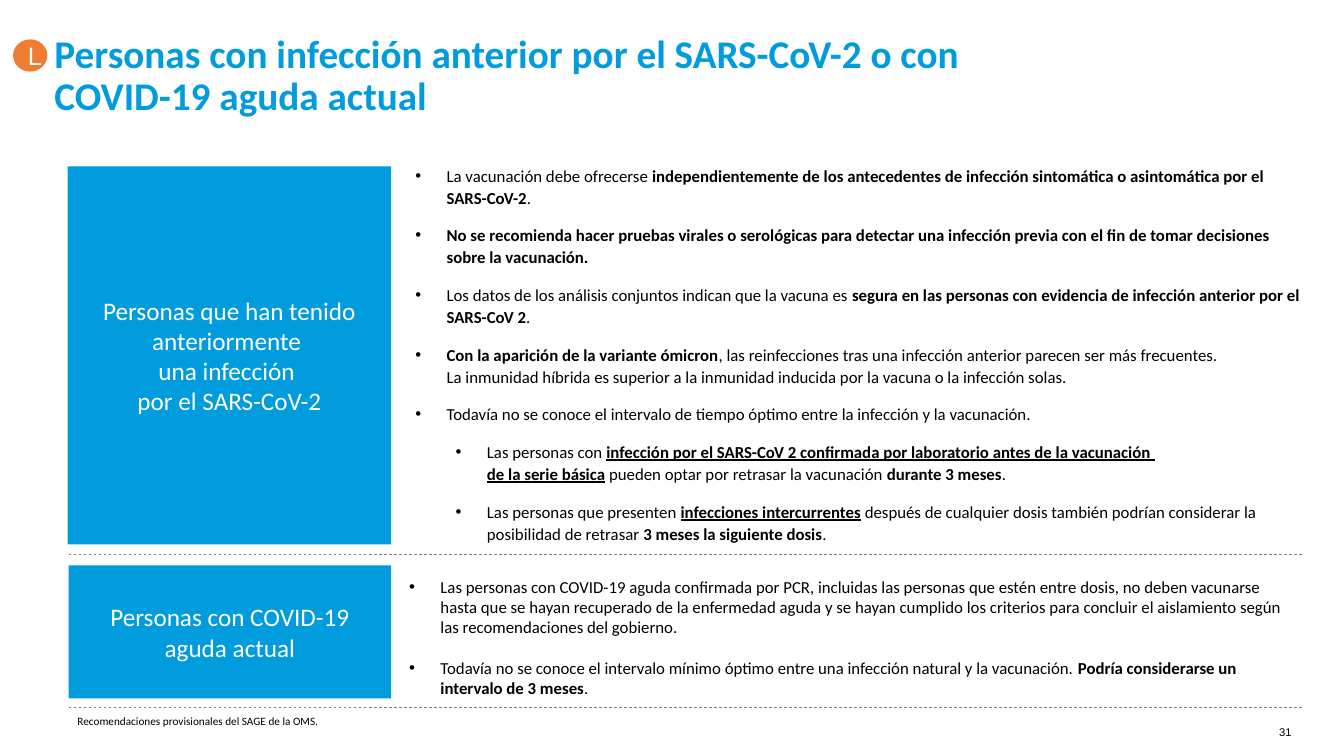
"""Builds the slide on vaccination after earlier or during current infection."""
from copy import deepcopy

from lxml import etree
from pptx import Presentation
from pptx import util as u
from pptx.dml.color import RGBColor
from pptx.enum import dml, shapes, text
from pptx.oxml.ns import qn

COLORS = {"blue": "009CDE", "orange": "EE7D31", "grey": "808080",
          "black": "000000", "white": "FFFFFF"}

TITLE = "Personas con infección anterior por el SARS-CoV-2 o con COVID-19 aguda actual"
BADGE = "L"
PAGE = "31"
SOURCE = "Recomendaciones provisionales del SAGE de la OMS."
PRIOR_LABEL = "Personas que han tenido anteriormente \nuna infección \npor el SARS-CoV-2"
ACUTE_LABEL = "Personas con COVID-19 aguda actual"

PRIOR_POINTS = [
    (0, [("La vacunación debe ofrecerse ", ""),
         ("independientemente de los antecedentes de infección sintomática o "
          "asintomática por el SARS-CoV-2", "b"), (".", "")]),
    (0, [("No se recomienda hacer pruebas virales o serológicas para detectar una "
          "infección previa con el fin de tomar decisiones sobre la vacunación.", "b")]),
    (0, [("Los datos de los análisis conjuntos indican que la vacuna es ", ""),
         ("segura en las personas con evidencia de infección anterior por el "
          "SARS-CoV 2", "b"), (".", "")]),
    (0, [("Con la aparición de la variante ómicron", "b"),
         (", las reinfecciones tras una infección anterior parecen ser más frecuentes. \n"
          "La inmunidad híbrida es superior a la inmunidad inducida por la vacuna o "
          "la infección solas.", "")]),
    (0, [("Todavía no se conoce el intervalo de tiempo óptimo entre la infección y "
          "la vacunación.", "")]),
    (1, [("Las personas con ", ""),
         ("infección por el SARS-CoV 2 confirmada por laboratorio antes de la "
          "vacunación \nde la serie básica", "bu"),
         (" pueden optar por retrasar la vacunación ", ""),
         ("durante 3 meses", "b"), (".", "")]),
    (1, [("Las personas que presenten ", ""), ("infecciones intercurrentes", "bu"),
         (" después de cualquier dosis también podrían considerar la posibilidad de "
          "retrasar ", ""), ("3 meses la siguiente dosis", "b"), (".", "")]),
]
ACUTE_POINTS = [
    (0, [("Las personas con COVID-19 aguda confirmada por PCR, incluidas las personas "
          "que estén entre dosis, no deben vacunarse hasta que se hayan recuperado de "
          "la enfermedad aguda y se hayan cumplido los criterios para concluir el "
          "aislamiento según las recomendaciones del gobierno.", "")]),
    (0, [("Todavía no se conoce el intervalo mínimo óptimo entre una infección natural "
          "y la vacunación. ", ""),
         ("Podría considerarse un intervalo de 3 meses", "b"), (".", "")]),
]

LEFT, RIGHT = 0.68, 12.93
DIVIDERS = (5.5, 7.02)
INDENT, HANG, LEVEL_STEP = 0.53, 0.31, 0.4
DEFAULT_INSETS = (0.1, 0.05, 0.1, 0.05)

deck = Presentation()
deck.slide_width, deck.slide_height = u.Inches(13.33), u.Inches(7.5)
slide = deck.slides.add_slide(deck.slide_layouts[6])


def rgb(name):
    return RGBColor.from_string(COLORS[name])


def apply(target, values):
    for key, value in values.items():
        setattr(target, key, value)


def add_bullet(paragraph, level):
    props = paragraph._p.get_or_add_pPr()
    props.set("marL", str(u.Inches(INDENT + level * LEVEL_STEP)))
    props.set("indent", str(u.Inches(-HANG)))
    color = etree.SubElement(props, qn("a:buClr"))
    etree.SubElement(color, qn("a:srgbClr")).set("val", COLORS["black"])
    etree.SubElement(props, qn("a:buFont")).set("typeface", "Arial")
    etree.SubElement(props, qn("a:buChar")).set("char", "•")


def add_run(paragraph, words, style, size, color, face):
    for index, part in enumerate(words.split("\n")):
        if index:
            paragraph.add_line_break()
            paragraph._p[-1].append(deepcopy(run._r.rPr))
        run = paragraph.add_run()
        run.text = part
        apply(run.font, {"size": u.Pt(size), "name": face,
                         "bold": "b" in style, "underline": "u" in style})
        run.font.color.rgb = rgb(color)


def write(shape, points, size, color="black", face="Calibri", bullets=False,
          insets=DEFAULT_INSETS, anchor=text.MSO_ANCHOR.TOP, gap=0, **layout):
    frame = shape.text_frame
    sides = ("margin_left", "margin_top", "margin_right", "margin_bottom")
    apply(frame, {"word_wrap": True, "vertical_anchor": anchor,
                  **{side: u.Inches(inset) for side, inset in zip(sides, insets)}})
    for index, (level, runs) in enumerate(points):
        paragraph = frame.add_paragraph() if index else frame.paragraphs[0]
        if bullets:
            add_bullet(paragraph, level)
        apply(paragraph, layout)
        if index:
            paragraph.space_before = u.Pt(gap)
        for words, style in runs:
            add_run(paragraph, words, style, size, color, face)


def add_text(box, points, size, **options):
    write(slide.shapes.add_textbox(*map(u.Inches, box)), points, size, **options)


def add_label(kind, box, words, fill, face="Calibri"):
    shape = slide.shapes.add_shape(kind, *map(u.Inches, box))
    shape.shadow.inherit = False
    shape.fill.solid()
    shape.fill.fore_color.rgb = rgb(fill)
    shape.line.fill.background()
    write(shape, [(0, [(words, "")])], 18, color="white", face=face,
          anchor=text.MSO_ANCHOR.MIDDLE, alignment=text.PP_ALIGN.CENTER)


def add_divider(y):
    line = slide.shapes.add_connector(shapes.MSO_CONNECTOR.STRAIGHT,
                                      *map(u.Inches, (LEFT, y, RIGHT, y)))
    apply(line.line, {"width": u.Pt(0.5), "dash_style": dml.MSO_LINE.DASH})
    line.line.color.rgb = rgb("grey")
    etree.SubElement(line._element.spPr, qn("a:effectLst"))


add_text((3.88, 1.62, 9.06, 3.78), PRIOR_POINTS, 12, bullets=True,
         insets=(0.02, 0, 0.02, 0), gap=5, line_spacing=1.1, space_after=u.Pt(6))
add_text((12.49, 7.2, 0.32, 0.2), [(0, [(PAGE, "")])], 8, face="Arial",
         insets=(0, 0, 0, 0), alignment=text.PP_ALIGN.RIGHT)
add_text((0.52, 0.39, 9.76, 0.79), [(0, [(TITLE, "b")])], 28, color="blue",
         insets=(0.02, 0, 0.39, 0), anchor=text.MSO_ANCHOR.BOTTOM, line_spacing=0.9)
add_label(shapes.MSO_SHAPE.RECTANGLE, (0.67, 1.65, 3.21, 3.75), PRIOR_LABEL, "blue")
add_label(shapes.MSO_SHAPE.RECTANGLE, (LEFT, 5.61, 3.2, 1.32), ACUTE_LABEL, "blue")
add_text((3.74, 5.67, 9.19, 1.31), ACUTE_POINTS, 12, bullets=True, gap=14.6)
add_label(shapes.MSO_SHAPE.OVAL, (0.13, 0.39, 0.34, 0.32), BADGE, "orange", face="Arial")
for divider_y in DIVIDERS:
    add_divider(divider_y)
add_text((0.67, 7.04, 6.67, 0.24), [(0, [(SOURCE, "")])], 8)

deck.save("out.pptx")
